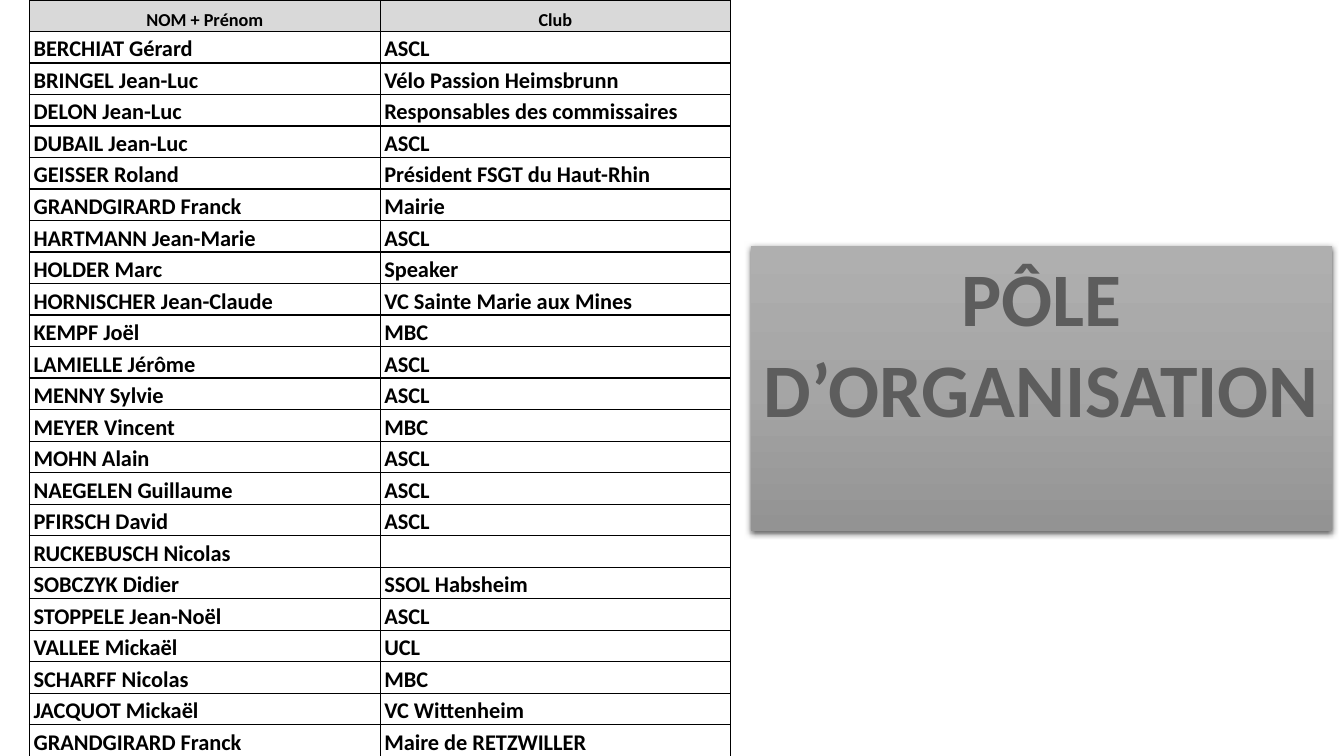
"""Build the slide listing the organisation team and their clubs."""
from lxml import etree
from pptx import Presentation
from pptx import util as u
from pptx.dml import color
from pptx.enum import shapes, text
from pptx.oxml import ns

HEADER = ("NOM + Prénom", "Club")
MEMBERS = [
    ("BERCHIAT Gérard", "ASCL"),
    ("BRINGEL Jean-Luc", "Vélo Passion Heimsbrunn"),
    ("DELON Jean-Luc", "Responsables des commissaires"),
    ("DUBAIL Jean-Luc", "ASCL"),
    ("GEISSER Roland", "Président FSGT du Haut-Rhin"),
    ("GRANDGIRARD Franck", "Mairie"),
    ("HARTMANN Jean-Marie", "ASCL"),
    ("HOLDER Marc", "Speaker"),
    ("HORNISCHER Jean-Claude", "VC Sainte Marie aux Mines"),
    ("KEMPF Joël", "MBC"),
    ("LAMIELLE Jérôme", "ASCL"),
    ("MENNY Sylvie", "ASCL"),
    ("MEYER Vincent", "MBC"),
    ("MOHN Alain", "ASCL"),
    ("NAEGELEN Guillaume", "ASCL"),
    ("PFIRSCH David", "ASCL"),
    ("RUCKEBUSCH Nicolas", ""),
    ("SOBCZYK Didier", "SSOL Habsheim"),
    ("STOPPELE Jean-Noël", "ASCL"),
    ("VALLEE Mickaël", "UCL"),
    ("SCHARFF Nicolas", "MBC"),
    ("JACQUOT Mickaël", "VC Wittenheim"),
    ("GRANDGIRARD Franck", "Maire de RETZWILLER"),
]
TITLE = ("PÔLE", "D’ORGANISATION")
TITLE_GRADIENT = [(0, "AFAFAF"), (50, "A5A5A5"), (100, "939393")]

SLIDE_WIDTH, SLIDE_HEIGHT = 960, 540
TABLE_LEFT, TABLE_WIDTH = 21, 501
TITLE_BOX = (536.4, 175.7, 415, 203.8)


def rgb(value):
    return color.RGBColor.from_string(value)


def add_xml(parent, markup):
    name, rest = markup.split(" ", 1)
    parent.append(etree.fromstring(f'{name} {ns.nsdecls("a")} {rest}'))


def write(paragraph, content, size, ink="000000", align=text.PP_ALIGN.LEFT, spacing=1.0):
    paragraph.alignment = align
    paragraph.line_spacing = spacing
    run = paragraph.add_run()
    run.text = content
    run.font.name = "Calibri"
    run.font.size = u.Pt(size)
    run.font.bold = True
    run.font.color.rgb = rgb(ink)


def format_cell(cell, fill=None):
    cell.margin_left = cell.margin_right = u.Pt(3)
    cell.margin_top = cell.margin_bottom = u.Pt(0)
    cell.vertical_anchor = text.MSO_ANCHOR.BOTTOM
    properties = cell._tc.get_or_add_tcPr()
    for side in "LRTB":
        add_xml(properties, f'<a:ln{side} w="{u.Pt(1)}"><a:solidFill>'
                            f'<a:srgbClr val="000000"/></a:solidFill></a:ln{side}>')
    if fill:
        cell.fill.solid()
        cell.fill.fore_color.rgb = rgb(fill)
    else:
        cell.fill.background()


def add_members(slide):
    rows = [HEADER, *MEMBERS]
    frame = slide.shapes.add_table(len(rows), len(HEADER), u.Pt(TABLE_LEFT), u.Pt(0),
                                   u.Pt(TABLE_WIDTH), u.Pt(SLIDE_HEIGHT))
    table = frame.table
    table.first_row = table.horz_banding = False
    for column in table.columns:
        column.width = u.Pt(TABLE_WIDTH / len(HEADER))
    for row_index, row in enumerate(rows):
        table.rows[row_index].height = u.Pt(SLIDE_HEIGHT / len(rows))
        is_header = row_index == 0
        for column_index, content in enumerate(row):
            cell = table.cell(row_index, column_index)
            format_cell(cell, fill="D9D9D9" if is_header else None)
            if content:
                write(cell.text_frame.paragraphs[0], content, spacing=1.15,
                      size=13 if is_header else 16,
                      align=text.PP_ALIGN.CENTER if is_header else text.PP_ALIGN.LEFT)


def add_title(slide):
    shape = slide.shapes.add_shape(shapes.MSO_SHAPE.RECTANGLE, *map(u.Pt, TITLE_BOX))
    shape.line.fill.background()
    shape.shadow.inherit = False
    properties = shape._element.spPr
    stops = "".join(f'<a:gs pos="{position * 1000}"><a:srgbClr val="{value}"/></a:gs>'
                    for position, value in TITLE_GRADIENT)
    add_xml(properties, f'<a:gradFill rotWithShape="1"><a:gsLst>{stops}</a:gsLst>'
                        '<a:lin ang="5400000" scaled="0"/></a:gradFill>')
    properties.find(ns.qn("a:prstGeom")).addnext(properties[-1])
    add_xml(properties.find(ns.qn("a:effectLst")),
            f'<a:outerShdw blurRad="{u.Pt(4.5)}" dist="{u.Pt(1.5)}" dir="5400000" '
            'algn="ctr" rotWithShape="0"><a:srgbClr val="000000">'
            '<a:alpha val="63000"/></a:srgbClr></a:outerShdw>')
    frame = shape.text_frame
    frame.word_wrap = False
    frame.vertical_anchor = text.MSO_ANCHOR.TOP
    for index, line in enumerate(TITLE):
        paragraph = frame.add_paragraph() if index else frame.paragraphs[0]
        write(paragraph, line, size=54, ink="5D5D5D", align=text.PP_ALIGN.CENTER)


def main():
    presentation = Presentation()
    presentation.slide_width = u.Pt(SLIDE_WIDTH)
    presentation.slide_height = u.Pt(SLIDE_HEIGHT)
    slide = presentation.slides.add_slide(presentation.slide_layouts[6])
    add_members(slide)
    add_title(slide)
    presentation.save("out.pptx")


if __name__ == "__main__":
    main()
